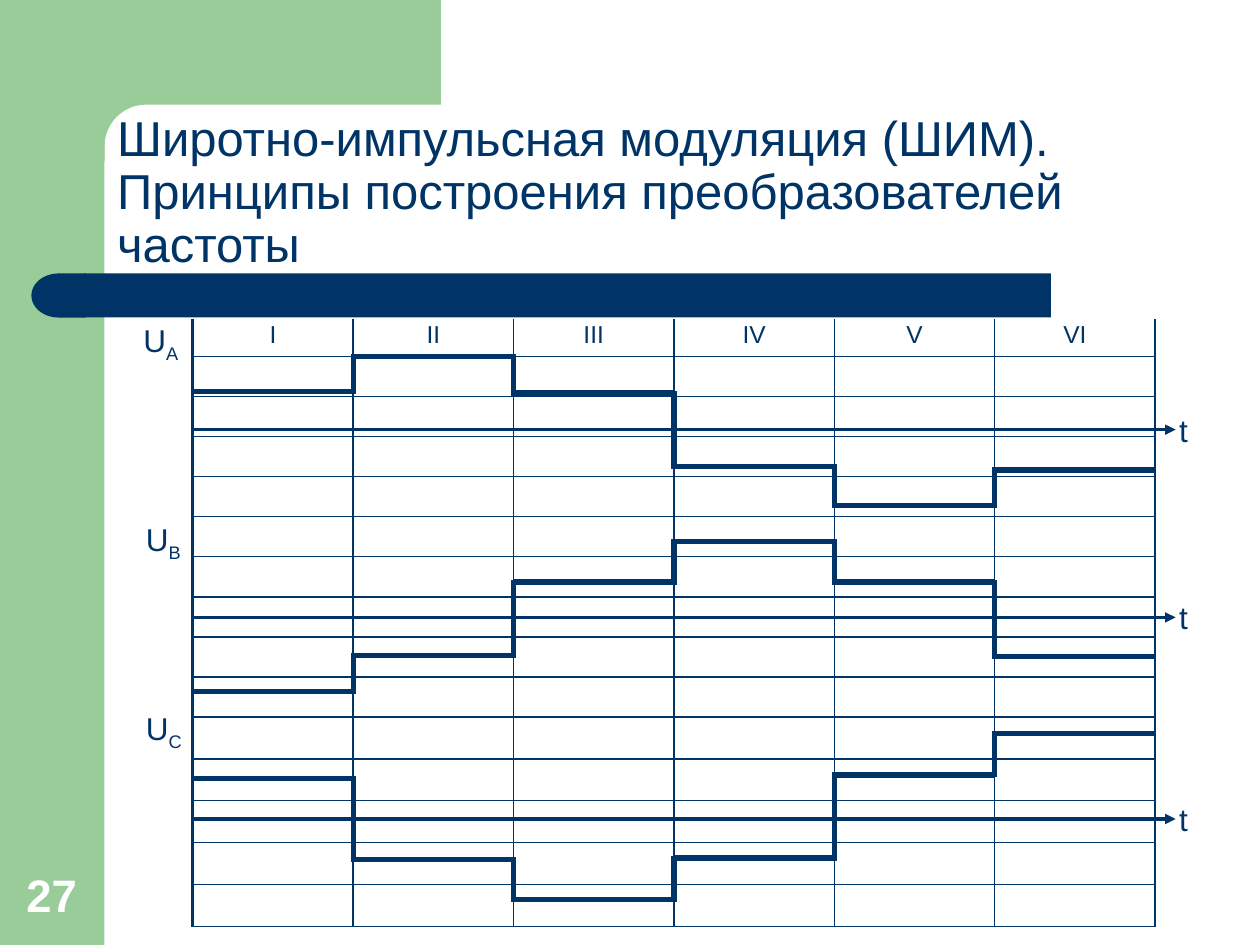
from math import cos, pi, sin

from lxml.etree import SubElement
from pptx import Presentation
from pptx.dml.color import RGBColor
from pptx.enum.shapes import MSO_CONNECTOR, MSO_SHAPE
from pptx.enum.text import MSO_ANCHOR, PP_ALIGN
from pptx.oxml.ns import qn
from pptx.util import Inches, Pt

NAVY, GREEN, WHITE = "003366", "99CC99", "FFFFFF"
FONT = "Arial"
TITLE = ("Широтно-импульсная модуляция (ШИМ).\v"
         "Принципы построения преобразователей частоты")
INTERVALS = ["I", "II", "III", "IV", "V", "VI"]
GRID_LEFT, GRID_TOP, STEP = 1.53, 2.53, 1.273
ROW_HEIGHTS = [0.3] + [0.318] * 9 + [0.333] * 5
AXIS_END = 9.33

# Phase letter, label position, time axis height, voltage level per interval
PHASES = [
    ("А", (1.04, 2.5), 3.41, [3.11, 2.83, 3.12, 3.7, 4.01, 3.73]),
    ("В", (1.06, 4.08), 4.9, [5.49, 5.2, 4.62, 4.3, 4.62, 5.21]),
    ("С", (1.06, 5.58), 6.5, [6.18, 6.82, 7.14, 6.81, 6.15, 5.82]),
]


def color(value):
    return RGBColor.from_string(value)


def format_text(paragraph, size, text_color=NAVY, bold=False):
    for run in paragraph.runs:
        run.font.name = FONT
        run.font.size = Pt(size)
        run.font.bold = bold
        run.font.color.rgb = color(text_color)


def paint(shape, fill):
    shape.shadow.inherit = False
    shape.fill.solid()
    shape.fill.fore_color.rgb = color(fill)
    shape.line.fill.background()


def add_block(slide, kind, left, top, width, height, fill):
    shape = slide.shapes.add_shape(
        kind, Inches(left), Inches(top), Inches(width), Inches(height))
    paint(shape, fill)
    return shape


def add_corner(slide):
    """Green top panel with a rounded inner corner."""
    center, radius = 1.16, 0.33
    arc = [(center - radius * sin(i * pi / 24), center - radius * cos(i * pi / 24))
           for i in range(13)]
    points = [(3.5, 0.83)] + arc + [(0.83, 1.28), (0.5, 1.28), (0.5, 0)]
    builder = slide.shapes.build_freeform(Inches(3.5), 0)
    builder.add_line_segments([(Inches(x), Inches(y)) for x, y in points])
    paint(builder.convert_to_shape(), GREEN)


def add_background(slide):
    add_block(slide, MSO_SHAPE.RECTANGLE, 0, 0, 0.83, 7.5, GREEN)
    add_corner(slide)
    add_block(slide, MSO_SHAPE.RECTANGLE, 0.67, 2.17, 7.67, 0.35, NAVY)
    cap = add_block(slide, MSO_SHAPE.FLOWCHART_DELAY, 0.25, 2.17, 0.43, 0.35, NAVY)
    cap._element.spPr.find(qn("a:xfrm")).set("flipH", "1")


def add_title(slide):
    title = slide.shapes.title
    title.left, title.top = Inches(0.83), Inches(0.97)
    title.width, title.height = Inches(8.67), Inches(1.25)
    frame = title.text_frame
    frame.text = TITLE
    frame.word_wrap = True
    frame.vertical_anchor = MSO_ANCHOR.BOTTOM
    paragraph = frame.paragraphs[0]
    paragraph.alignment = PP_ALIGN.LEFT
    paragraph.line_spacing = 0.9
    format_text(paragraph, 28)


def add_label(slide, text, left, top, width, height=0.4, subscript=""):
    box = slide.shapes.add_textbox(
        Inches(left), Inches(top), Inches(width), Inches(height))
    box.text_frame.word_wrap = False
    paragraph = box.text_frame.paragraphs[0]
    paragraph.text = text
    if subscript:
        run = paragraph.add_run()
        run.text = subscript
        run.font._element.set("baseline", "-25000")
    format_text(paragraph, 18)
    return box


def add_page_number(slide):
    box = add_label(slide, "27", 0.09, 6.83, 0.64, 0.53)
    box.text_frame.word_wrap = True
    box.text_frame.vertical_anchor = MSO_ANCHOR.BOTTOM
    paragraph = box.text_frame.paragraphs[0]
    paragraph.alignment = PP_ALIGN.CENTER
    format_text(paragraph, 26, WHITE, bold=True)


def set_border(cell, side, width):
    line = SubElement(cell._tc.get_or_add_tcPr(), qn(f"a:{side}"), w=str(Pt(width)))
    if width:
        fill = SubElement(line, qn("a:solidFill"))
        SubElement(fill, qn("a:srgbClr"), val=NAVY)
    else:
        SubElement(line, qn("a:noFill"))


def add_grid(slide):
    rows, columns = len(ROW_HEIGHTS), len(INTERVALS)
    table = slide.shapes.add_table(
        rows, columns, Inches(GRID_LEFT), Inches(GRID_TOP),
        Inches(STEP * columns), Inches(sum(ROW_HEIGHTS))).table
    table.first_row = table.horz_banding = False
    for column in table.columns:
        column.width = Inches(STEP)
    for row_index, height in enumerate(ROW_HEIGHTS):
        table.rows[row_index].height = Inches(height)
        for column_index, name in enumerate(INTERVALS):
            cell = table.cell(row_index, column_index)
            set_border(cell, "lnL", 1 if column_index else 2.25)
            set_border(cell, "lnR", 1)
            set_border(cell, "lnT", 1 if row_index else 0)
            set_border(cell, "lnB", 1)
            cell.fill.background()
            # Empty cells need no margins, so that low rows keep their height
            cell.margin_top = cell.margin_bottom = 0 if row_index else Inches(0.05)
            if row_index == 0:
                cell.text_frame.text = name
                paragraph = cell.text_frame.paragraphs[0]
                paragraph.alignment = PP_ALIGN.CENTER
                paragraph.line_spacing = 0.85
                format_text(paragraph, 14)


def add_line(slide, start, end, width, arrow=False):
    connector = slide.shapes.add_connector(
        MSO_CONNECTOR.STRAIGHT, *(Inches(value) for value in start + end))
    connector.line.color.rgb = color(NAVY)
    connector.line.width = Pt(width)
    properties = connector._element.spPr
    if arrow:
        SubElement(connector.line._get_or_add_ln(), qn("a:tailEnd"), type="triangle")
    SubElement(properties, qn("a:effectLst"))


def add_phase(slide, letter, label_position, axis, levels):
    """Time axis, stepped voltage curve and labels of one phase."""
    add_line(slide, (GRID_LEFT, axis), (AXIS_END, axis), 2, arrow=True)
    for index, level in enumerate(levels):
        left = GRID_LEFT + index * STEP
        add_line(slide, (left, level), (left + STEP, level), 3)
        if index:
            # Risers overlap the levels by half a line width
            low, high = sorted((levels[index - 1], level))
            add_line(slide, (left, high + 0.02), (left, low - 0.02), 3)
    add_label(slide, "U", *label_position, 0.49, subscript=letter)
    add_label(slide, "t", 9.26, axis - 0.2, 0.27)


def main():
    presentation = Presentation()
    presentation.slide_width, presentation.slide_height = Inches(10), Inches(7.5)
    slide = presentation.slides.add_slide(presentation.slide_layouts[5])
    add_background(slide)
    add_page_number(slide)
    add_grid(slide)
    add_title(slide)
    for phase in PHASES:
        add_phase(slide, *phase)
    presentation.save("out.pptx")


if __name__ == "__main__":
    main()
